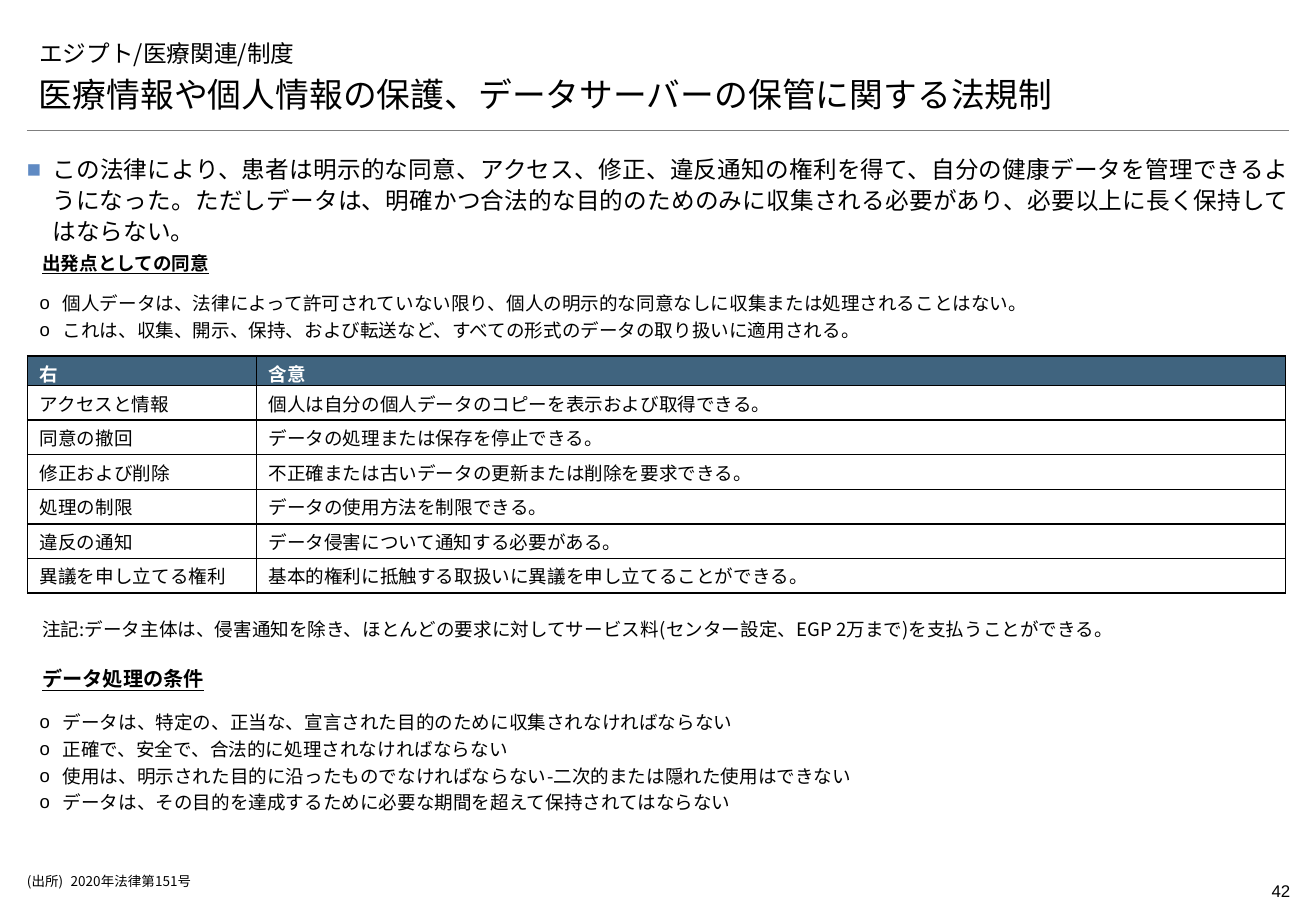
from lxml import etree
from pptx import Presentation
from pptx import util as u
from pptx.dml.color import RGBColor
from pptx.enum import shapes, text
from pptx.oxml import ns

Pt = u.Pt
FONT = "Noto Sans CJK JP"
COLORS = {
    "ink": "000000",
    "white": "FFFFFF",
    "rule": "7F7F7F",
    "header": "40647F",
    "bullet": "5F8AC3",
}
LEFT, WIDTH = 16, 748
RIGHTS = [
    ("右", "含意"),
    ("アクセスと情報", "個人は自分の個人データのコピーを表示および取得できる。"),
    ("同意の撤回", "データの処理または保存を停止できる。"),
    ("修正および削除", "不正確または古いデータの更新または削除を要求できる。"),
    ("処理の制限", "データの使用方法を制限できる。"),
    ("違反の通知", "データ侵害について通知する必要がある。"),
    ("異議を申し立てる権利", "基本的権利に抵触する取扱いに異議を申し立てることができる。"),
]
CONSENT = [
    "個人データは、法律によって許可されていない限り、個人の明示的な同意なしに収集または処理されることはない。",
    "これは、収集、開示、保持、および転送など、すべての形式のデータの取り扱いに適用される。",
]
CONDITIONS = [
    "データは、特定の、正当な、宣言された目的のために収集されなければならない",
    "正確で、安全で、合法的に処理されなければならない",
    "使用は、明示された目的に沿ったものでなければならない-二次的または隠れた使用はできない",
    "データは、その目的を達成するために必要な期間を超えて保持されてはならない",
]
INTRO = (
    "この法律により、患者は明示的な同意、アクセス、修正、違反通知の権利を得て、"
    "自分の健康データを管理できるようになった。ただしデータは、明確かつ合法的な目的のためのみに"
    "収集される必要があり、必要以上に長く保持してはならない。"
)
NOTE = (
    "注記:データ主体は、侵害通知を除き、ほとんどの要求に対して"
    "サービス料(センター設定、EGP 2万まで)を支払うことができる。"
)


def rgb(name):
    return RGBColor.from_string(COLORS[name])


def add_xml(parent, tag, **attributes):
    return etree.SubElement(parent, ns.qn(tag), attributes)


def write(frame, lines, size=11, color="ink", font=FONT, bold=False, underline=False,
          align=text.PP_ALIGN.LEFT, spacing=1.0, after=0, indent=0, bullet=None,
          bullet_color="ink"):
    for index, line in enumerate(lines):
        paragraph = frame.paragraphs[0] if index == 0 else frame.add_paragraph()
        paragraph.alignment = align
        paragraph.line_spacing = spacing
        paragraph.space_after = Pt(after)
        properties = paragraph._p.get_or_add_pPr()
        if indent:
            properties.set("marL", str(Pt(indent)))
            properties.set("indent", str(-Pt(indent)))
        if bullet:
            add_xml(add_xml(properties, "a:buClr"), "a:srgbClr", val=COLORS[bullet_color])
            add_xml(properties, "a:buFont", typeface="Arial")
            add_xml(properties, "a:buChar", char=bullet)
        run = paragraph.add_run()
        run.text = line
        run.font.size = Pt(size)
        run.font.bold = bold
        run.font.underline = underline
        run.font.color.rgb = rgb(color)
        run.font.name = font
        add_xml(run.font._element, "a:ea", typeface=FONT)


def place(box, left, top, width, height):
    box.left, box.top, box.width, box.height = map(Pt, (left, top, width, height))


def set_insets(holder, side, end):
    holder.margin_left = holder.margin_right = Pt(side)
    holder.margin_top = holder.margin_bottom = Pt(end)


def add_text(slide, lines, left, top, width, height, insets=(7.2, 3.6),
             anchor=text.MSO_ANCHOR.TOP, **style):
    frame = slide.shapes.add_textbox(*map(Pt, (left, top, width, height))).text_frame
    frame.word_wrap = True
    frame.vertical_anchor = anchor
    set_insets(frame, *insets)
    write(frame, lines, **style)


def add_title(slide, line):
    title = slide.shapes.title
    place(title, LEFT, 15.1, WIDTH, 28.1)
    title.text_frame.vertical_anchor = text.MSO_ANCHOR.BOTTOM
    title.text_frame.auto_size = text.MSO_AUTO_SIZE.NONE
    write(title.text_frame, [line], size=14)


def add_rule(slide, top):
    rule = slide.shapes.add_connector(
        shapes.MSO_CONNECTOR.STRAIGHT, Pt(LEFT), Pt(top), Pt(LEFT + WIDTH), Pt(top))
    rule.line.color.rgb = rgb("rule")
    rule.line.width = Pt(0.25)
    add_xml(rule._element.spPr, "a:effectLst")


def add_borders(cell):
    properties = cell._tc.get_or_add_tcPr()
    for index, side in enumerate(("a:lnL", "a:lnR", "a:lnT", "a:lnB")):
        border = etree.Element(ns.qn(side), {"w": str(Pt(1))})
        add_xml(add_xml(border, "a:solidFill"), "a:srgbClr", val=COLORS["ink"])
        properties.insert(index, border)


def add_rights_table(slide):
    rights = slide.shapes.add_table(
        len(RIGHTS), 2, Pt(16.4), Pt(211), Pt(745.6), Pt(140.4)).table
    for column, width in zip(rights.columns, (135.6, 610)):
        column.width = Pt(width)
    for index, entries in enumerate(RIGHTS):
        is_header = index == 0
        rights.rows[index].height = Pt(10.1 if is_header else 20.5)
        for cell, entry in zip(rights.rows[index].cells, entries):
            cell.vertical_anchor = text.MSO_ANCHOR.MIDDLE
            set_insets(cell, 7.2, 2.16)
            cell.fill.solid()
            cell.fill.fore_color.rgb = rgb("header" if is_header else "white")
            add_borders(cell)
            write(cell.text_frame, [entry], bold=is_header,
                  color="white" if is_header else "ink")


def main():
    deck = Presentation()
    deck.slide_width, deck.slide_height = Pt(780), Pt(540)
    slide = deck.slides.add_slide(deck.slide_layouts[5])
    circles = {"spacing": 1.2, "indent": 13.7, "bullet": "o"}
    heading = {"spacing": 1.2, "bold": True, "underline": True}

    add_rule(slide, 77)
    add_title(slide, "エジプト/医療関連/制度")
    add_text(slide, ["医療情報や個人情報の保護、データサーバーの保管に関する法規制"],
             LEFT, 43.2, WIDTH, 28.1, anchor=text.MSO_ANCHOR.BOTTOM,
             size=20, font="Montserrat")
    add_text(slide, [INTRO], LEFT, 90, WIDTH, 35.3, insets=(0, 0), size=14,
             align=text.PP_ALIGN.JUSTIFY, spacing=1.1, after=2, indent=15.1,
             bullet="■", bullet_color="bullet")
    add_text(slide, ["出発点としての同意"], 18, 143.3, 334.8, 21.6, **heading)
    add_text(slide, CONSENT, 16.4, 167, 746, 37.4, **circles)
    add_rights_table(slide)
    add_text(slide, [NOTE], 18, 360, 746, 20.9, spacing=1.2)
    add_text(slide, ["データ処理の条件"], 18, 388.8, 334.8, 23, size=12, **heading)
    add_text(slide, CONDITIONS, 16.4, 415.4, 746, 69.8, **circles)
    add_text(slide, ["(出所)\t2020年法律第151号"], LEFT, 517.7, 714.2, 11.5,
             insets=(0, 0), size=8, indent=25.9)
    add_text(slide, ["42"], 707.8, 518.4, 56.9, 19.4, insets=(0, 3.6), size=10,
             font="Arial", align=text.PP_ALIGN.RIGHT)
    deck.save("out.pptx")


if __name__ == "__main__":
    main()
